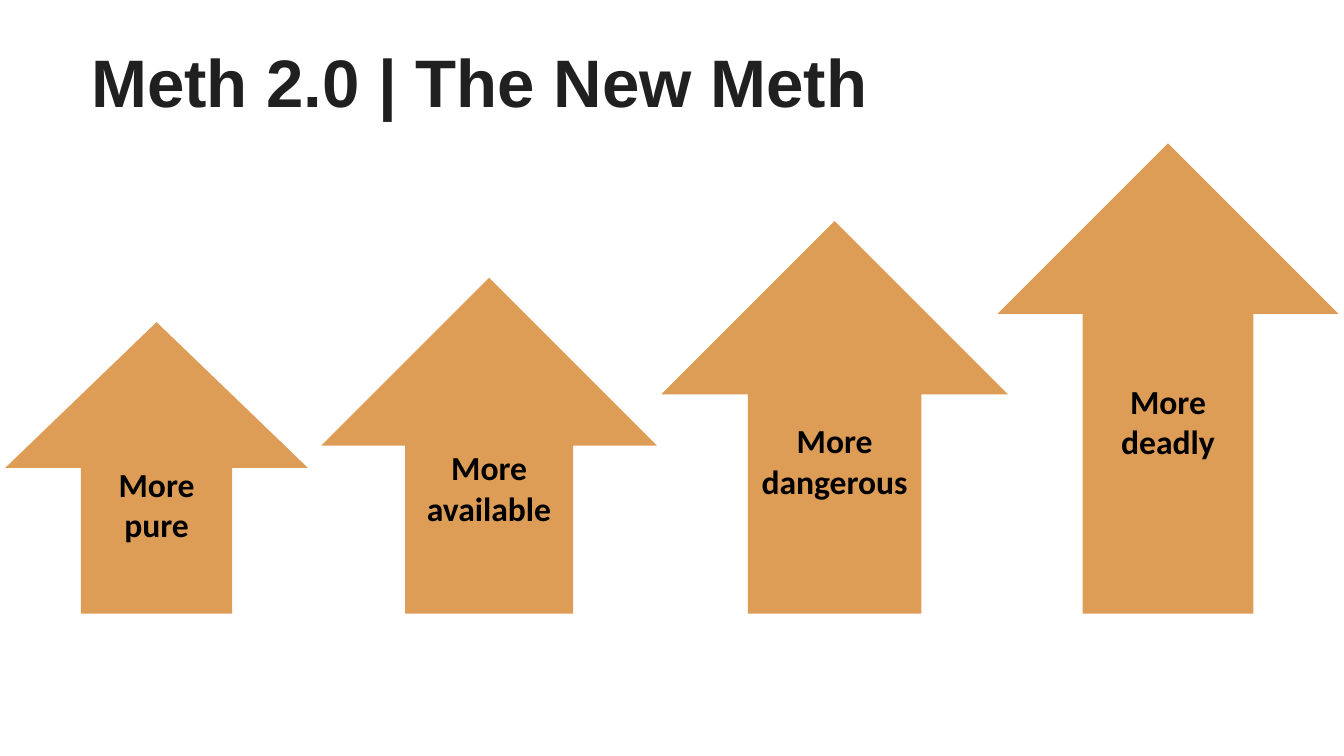
"""Build a slide of four rising arrows under a title."""
import pptx
import pptx.dml.color
import pptx.enum.shapes
import pptx.enum.text
import pptx.util

Cm = pptx.util.Cm
ALIGN = pptx.enum.text.PP_ALIGN
ANCHOR = pptx.enum.text.MSO_ANCHOR

TITLE = "Meth 2.0 | The New Meth"
ARROWS = [
    {"label": "More pure", "left": 0.1, "width": 5.72, "height": 5.51},
    {"label": "More available", "left": 6.07, "width": 6.35, "height": 6.35},
    {"label": "More dangerous", "left": 12.5, "width": 6.55, "height": 7.42},
    {"label": "More deadly", "left": 18.85, "width": 6.45, "height": 8.89},
]
BASELINE = 11.6
SIDE_INSET = 0.13

ORANGE = pptx.dml.color.RGBColor(0xDD, 0x9D, 0x56)
CHARCOAL = pptx.dml.color.RGBColor(0x20, 0x20, 0x20)
BLACK = pptx.dml.color.RGBColor(0, 0, 0)


def write_text(shape, text, *, font, size, color, align, anchor):
    frame = shape.text_frame
    frame.text = text
    frame.word_wrap = True
    frame.auto_size = pptx.enum.text.MSO_AUTO_SIZE.NONE
    frame.vertical_anchor = anchor
    paragraph = frame.paragraphs[0]
    paragraph.alignment = align
    paragraph.font.name = font
    paragraph.font.size = pptx.util.Pt(size)
    paragraph.font.bold = True
    paragraph.font.color.rgb = color


def add_arrow(slide, label, left, width, height):
    arrow = slide.shapes.add_shape(
        pptx.enum.shapes.MSO_SHAPE.UP_ARROW,
        Cm(left), Cm(BASELINE - height), Cm(width), Cm(height))
    arrow.shadow.inherit = False
    arrow.fill.solid()
    arrow.fill.fore_color.rgb = ORANGE
    arrow.line.fill.background()
    arrow.text_frame.margin_left = arrow.text_frame.margin_right = Cm(SIDE_INSET)
    write_text(arrow, label, font="Calibri", size=18, color=BLACK,
               align=ALIGN.CENTER, anchor=ANCHOR.MIDDLE)


def main():
    presentation = pptx.Presentation()
    presentation.slide_width = Cm(25.4)
    presentation.slide_height = Cm(14.29)
    slide = presentation.slides.add_slide(presentation.slide_layouts[5])

    title = slide.shapes.title
    title.left, title.top = Cm(1.47), Cm(0.03)
    title.width, title.height = Cm(22.23), Cm(2.39)
    write_text(title, TITLE, font="Arial", size=36, color=CHARCOAL,
               align=ALIGN.LEFT, anchor=ANCHOR.BOTTOM)

    for arrow in ARROWS:
        add_arrow(slide, **arrow)

    presentation.save("out.pptx")


if __name__ == "__main__":
    main()
